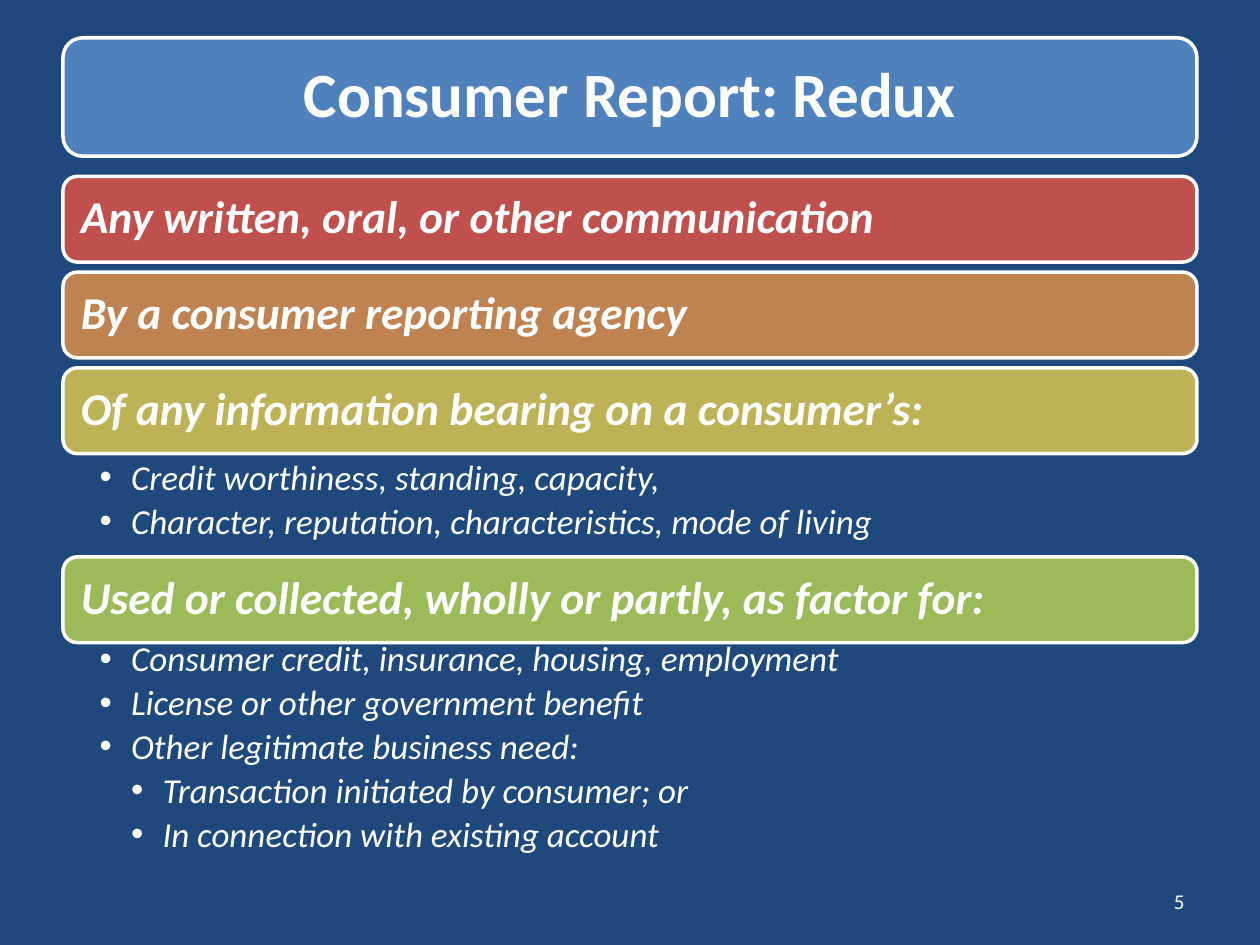
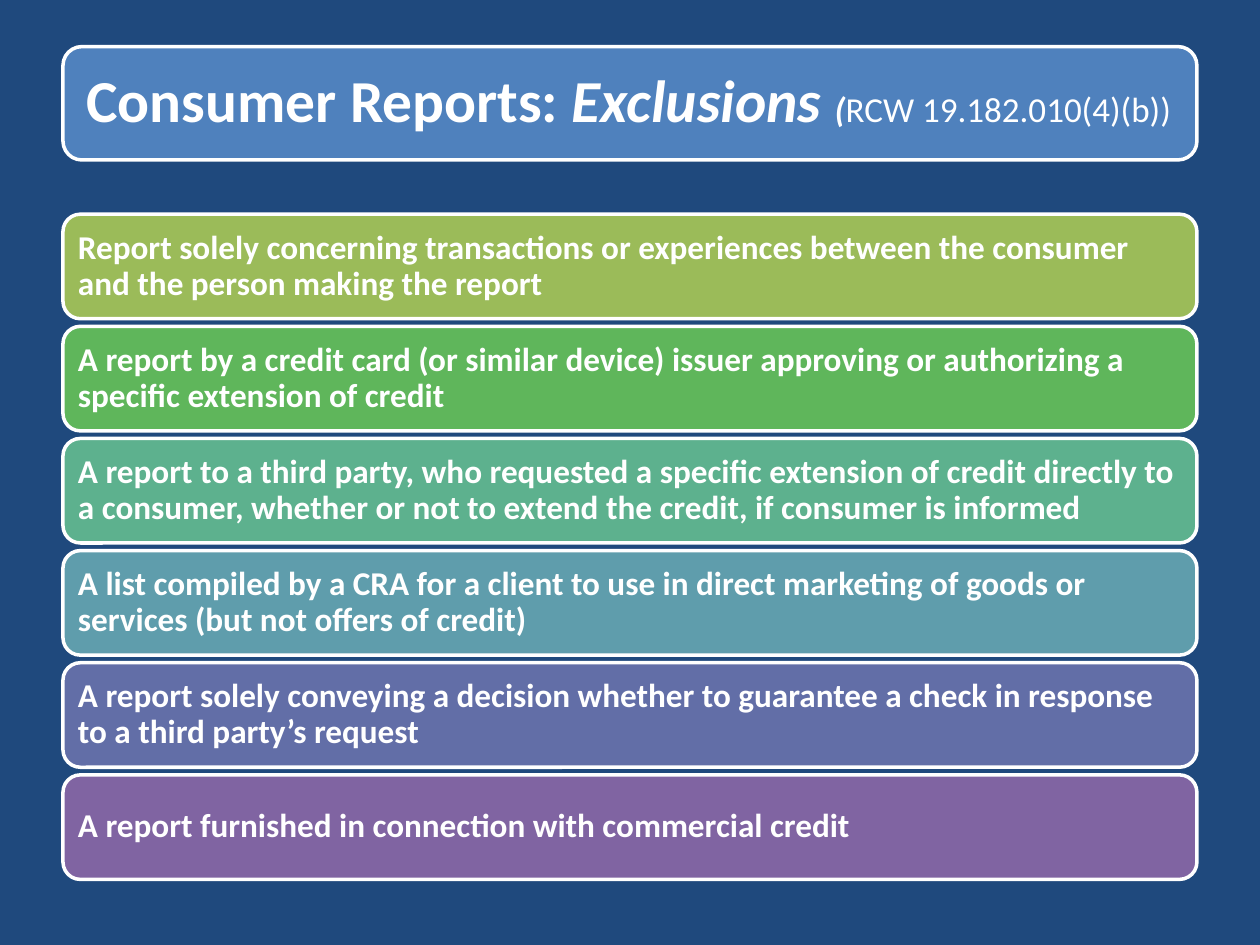
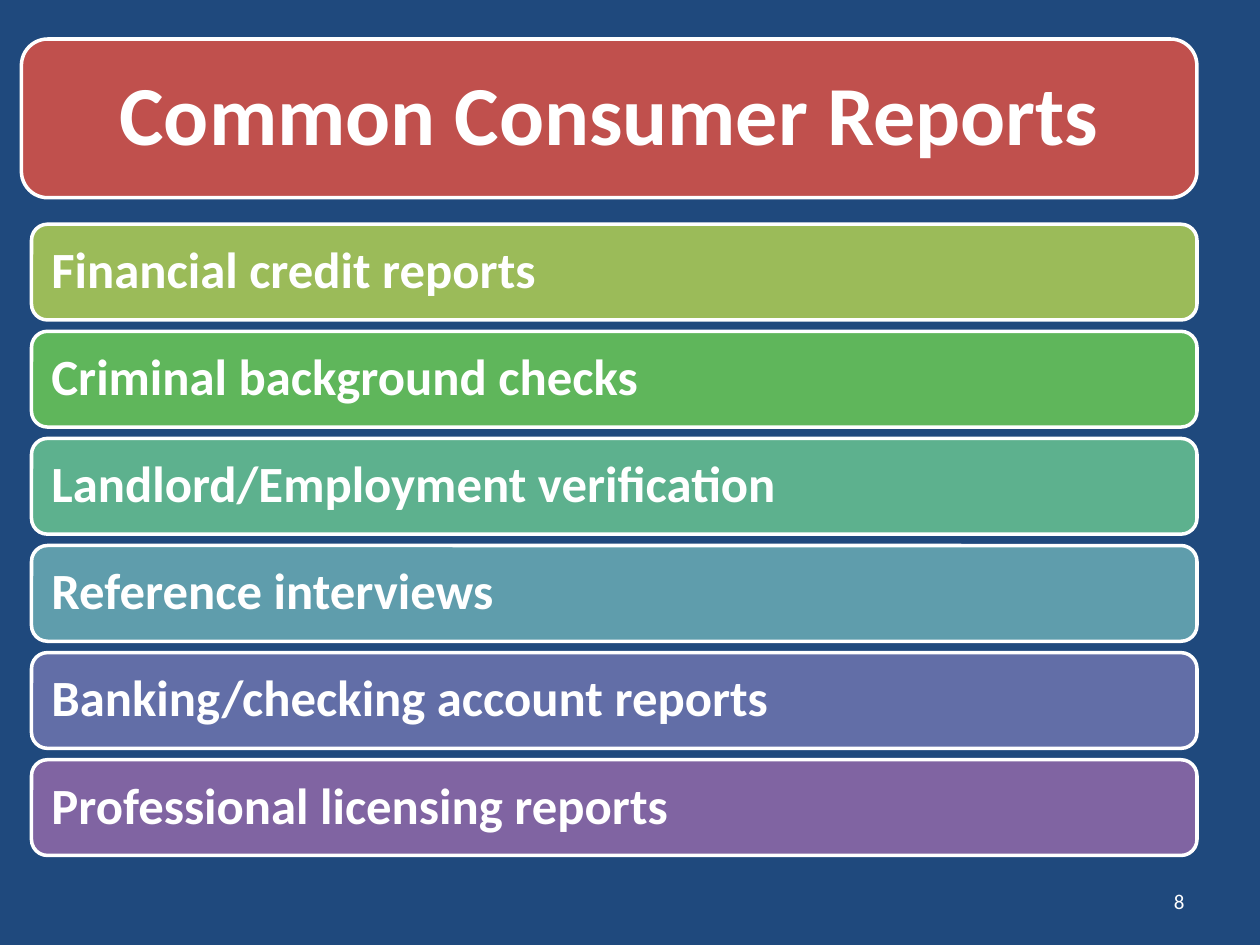
from lxml.etree import SubElement
from pptx import Presentation
from pptx.dml.color import RGBColor
from pptx.enum.shapes import MSO_SHAPE
from pptx.enum.text import MSO_ANCHOR, MSO_AUTO_SIZE, PP_ALIGN
from pptx.oxml.ns import qn
from pptx.util import Inches, Pt

FONT = "Calibri"
HUES = {
    "navy": "1F497D", "white": "FFFFFF", "blue": "4F81BD", "red": "C0504D",
    "orange": "BE8351", "gold": "BDB255", "lime": "9BBB59", "green": "5FB65B",
    "teal": "5DB18E", "aqua": "5F9DAC", "indigo": "626EA7", "purple": "8064A2",
}
RAMP = ["lime", "green", "teal", "aqua", "indigo", "purple"]
RIGHT = 9.5  # shared right edge of all bands

# Title runs: (text, size, bold, italic)
# Bars: (text, bullets); bullets: (shift below bar, height, [(level, text)])
SLIDES = [
    {
        "title": [("Consumer Report: Redux", 36, True, False)],
        "band": (0.5, 0.3, 0.94), "fill": "blue", "align": PP_ALIGN.CENTER,
        "left": 0.5, "top": 1.4, "high": 0.68, "gap": 0.08,
        "size": 26, "italic": True,
        "hues": ["red", "orange", "gold", "lime"],
        "bars": [
            ("Any written, oral, or other communication", None),
            ("By a consumer reporting agency", None),
            ("Of any information bearing on a consumer’s:", (0.01, 0.77, [
                (1, "Credit worthiness, standing, capacity,"),
                (1, "Character, reputation, characteristics, mode of living"),
            ])),
            ("Used or collected, wholly or partly, as factor for:", (-0.05, 1.88, [
                (1, "Consumer credit, insurance, housing, employment"),
                (1, "License or other government benefit"),
                (1, "Other legitimate business need:"),
                (2, "Transaction initiated by consumer; or"),
                (2, "In connection with existing account"),
            ])),
        ],
        "number": "5",
    },
    {
        "title": [
            ("Consumer Reports: ", 34, True, False),
            ("Exclusions ", 34, True, True),
            ("(", 20, True, True),
            ("RCW 19.182.010(4)(b))", 20, False, False),
        ],
        "band": (0.5, 0.37, 0.9), "fill": "blue", "align": PP_ALIGN.LEFT,
        "left": 0.5, "top": 1.7, "high": 0.83, "gap": 0.06,
        "size": 19, "italic": False, "hues": RAMP,
        "bars": [
            ("Report solely concerning transactions or experiences between "
             "the consumer and the person making the report", None),
            ("A report by a credit card (or similar device) issuer approving "
             "or authorizing a specific extension of credit", None),
            ("A report to a third party, who requested a specific extension of "
             "credit directly to a consumer, whether or not to extend the "
             "credit, if consumer is informed", None),
            ("A list compiled by a CRA for a client to use in direct marketing "
             "of goods or services (but not offers of credit)", None),
            ("A report solely conveying a decision whether to guarantee a check "
             "in response to a third party’s request", None),
            ("A report furnished in connection with commercial credit", None),
        ],
        "number": None,
    },
    {
        "title": [("Common Consumer Reports", 48, True, False)],
        "band": (0.17, 0.31, 1.26), "fill": "red", "align": PP_ALIGN.CENTER,
        "left": 0.25, "top": 1.78, "high": 0.76, "gap": 0.09,
        "size": 29, "italic": False, "hues": RAMP,
        "bars": [
            ("Financial credit reports", None),
            ("Criminal background checks", None),
            ("Landlord/Employment verification", None),
            ("Reference interviews", None),
            ("Banking/checking account reports", None),
            ("Professional licensing reports", None),
        ],
        "number": "8",
    },
]


def rgb(name):
    return RGBColor.from_string(HUES[name])


def add_run(para, text, size, bold=False, italic=False):
    run = para.add_run()
    run.text = text
    font = run.font
    font.name, font.size = FONT, Pt(size)
    font.bold, font.italic = bold, italic
    font.color.rgb = rgb("white")


def set_frame(frame, insets, anchor):
    frame.word_wrap = True
    frame.auto_size = MSO_AUTO_SIZE.NONE
    frame.vertical_anchor = anchor
    (frame.margin_left, frame.margin_top,
     frame.margin_right, frame.margin_bottom) = [Inches(n) for n in insets]


def set_head(frame, runs, align):
    """Fill a band's frame; its insets grow with the text size."""
    set_frame(frame, [runs[0][1] / 240] * 4, MSO_ANCHOR.MIDDLE)
    para = frame.paragraphs[0]
    para.alignment, para.line_spacing = align, 0.9
    for run in runs:
        add_run(para, *run)


def add_band(slide, left, top, high, fill):
    band = slide.shapes.add_shape(
        MSO_SHAPE.ROUNDED_RECTANGLE, Inches(left), Inches(top),
        Inches(RIGHT - left), Inches(high))
    band.shadow.inherit = False
    band.fill.solid()
    band.fill.fore_color.rgb = rgb(fill)
    band.line.color.rgb = rgb("white")
    band.line.width = Pt(2)
    return band


def add_title(slide, data):
    left, top, high = data["band"]
    band = add_band(slide, left, top, high, data["fill"])
    title = slide.shapes.title
    title._element.addprevious(band._element)
    edge = high * 0.05  # clears the rounded corners
    title.left, title.top = Inches(left + edge), Inches(top + edge)
    title.width = Inches(RIGHT - left - 2 * edge)
    title.height = Inches(high - 2 * edge)
    set_head(title.text_frame, data["title"], data["align"])


def add_list(slide, left, top, high, items):
    box = slide.shapes.add_textbox(
        Inches(left), Inches(top), Inches(RIGHT - left), Inches(high))
    frame = box.text_frame
    set_frame(frame, (0.29, 0.04, 0.2, 0.04), MSO_ANCHOR.TOP)
    for i, (level, text) in enumerate(items):
        para = frame.add_paragraph() if i else frame.paragraphs[0]
        para.level, para.line_spacing = level, 0.9
        para.space_after = Pt(3.5)
        props = para._p.get_or_add_pPr()
        props.set("marL", str(Inches(0.25 * level)))
        props.set("indent", str(Inches(-0.25)))
        SubElement(props, qn("a:buFont")).set("typeface", "Arial")
        SubElement(props, qn("a:buChar")).set("char", "•")
        add_run(para, text, 20, italic=True)


def add_bars(slide, data):
    left, top, high = data["left"], data["top"], data["high"]
    for (text, notes), hue in zip(data["bars"], data["hues"]):
        band = add_band(slide, left, top, high, hue)
        run = (text, data["size"], True, data["italic"])
        set_head(band.text_frame, [run], PP_ALIGN.LEFT)
        top += high
        if notes:
            shift, tall, items = notes
            add_list(slide, left, top + shift, tall, items)
            top += tall + 0.05
        else:
            top += data["gap"]


def add_number(slide, text):
    box = slide.shapes.add_textbox(
        Inches(7.17), Inches(6.95), Inches(2.33), Inches(0.4))
    set_frame(box.text_frame, (0.1, 0.05, 0.1, 0.05), MSO_ANCHOR.MIDDLE)
    para = box.text_frame.paragraphs[0]
    para.alignment = PP_ALIGN.RIGHT
    add_run(para, text, 12)


def main():
    deck = Presentation()
    deck.slide_width, deck.slide_height = Inches(10), Inches(7.5)
    back = deck.slide_master.background.fill
    back.solid()
    back.fore_color.rgb = rgb("navy")
    for data in SLIDES:
        slide = deck.slides.add_slide(deck.slide_layouts[5])
        add_title(slide, data)
        add_bars(slide, data)
        if data["number"]:
            add_number(slide, data["number"])
    deck.save("out.pptx")


if __name__ == "__main__":
    main()
